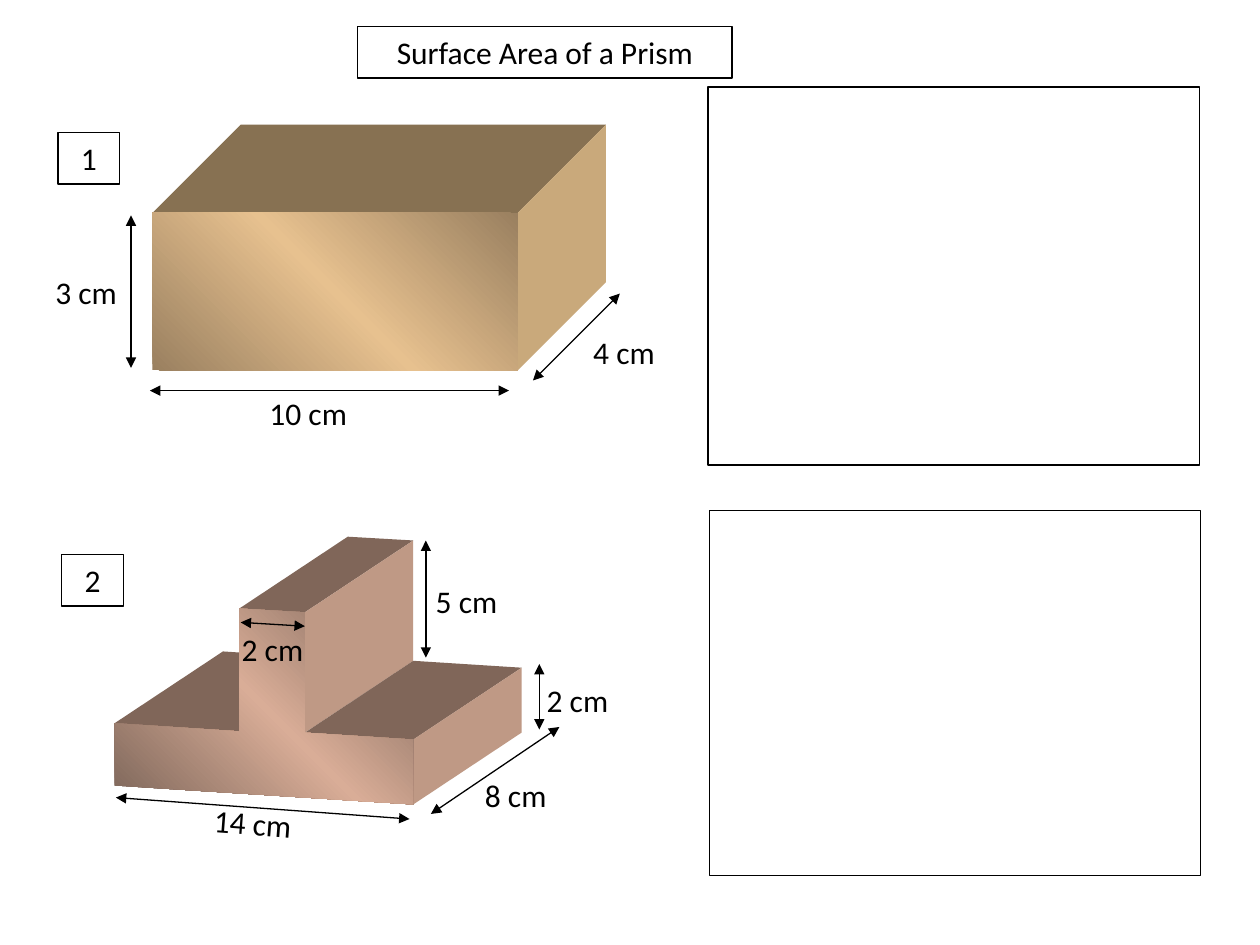
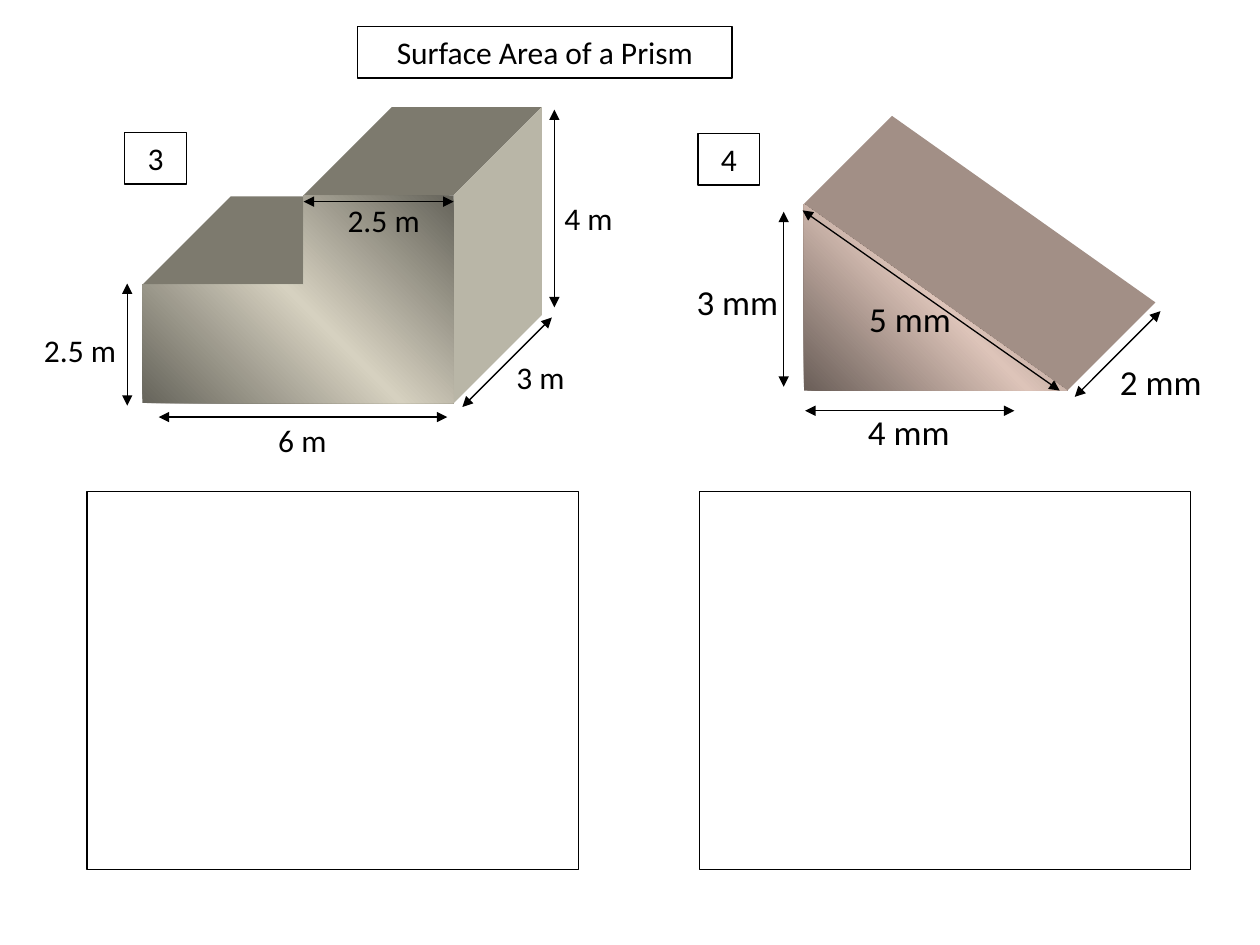
from lxml import etree
from pptx import Presentation
from pptx.dml.color import RGBColor
from pptx.enum.shapes import MSO_CONNECTOR, MSO_SHAPE
from pptx.enum.text import MSO_ANCHOR, PP_ALIGN
from pptx.oxml import parse_xml
from pptx.oxml.ns import nsdecls, qn
from pptx.util import Inches, Pt

WIDTH, HEIGHT = Inches(10), Inches(7.5)
COLS, ROWS = 100, 75
COL, ROW = WIDTH / COLS, HEIGHT / ROWS

COLORS = {
    "ink": "000000",
    "tan": {"top": "877152", "side": "C9A97B", "edge": "9A8060", "glow": "E7C18F"},
    "rose": {"top": "806659", "side": "BF9985", "edge": "7D665A", "glow": "D9AD97"},
    "grey": {"top": "7D7A6E", "side": "B9B6A7", "edge": "66645B", "glow": "D6D1C0"},
    "pink": {"top": "A28F86", "side": "A28F86", "edge": "6A5E58", "glow": "DDC4B9"},
}
FONT = {"name": "Calibri", "size": Pt(18)}
TITLE = "Surface Area of a Prism"
TITLE_BOX = (28.4, 2.1, 29.7, 4.1)
NUMBER_SIZE = (4.9, 4.1)

# Outlines run clockwise. Points, arrows and labels count from each prism's origin.
# A label is text, column, row, width and, if tilted, its rotation.
BOX_PRISM = {
    "origin": (12.1, 16.9), "color": "tan", "depth": (7, -7), "size": 18,
    "outline": [(0, 0), (29, 0), (29, 12.5), (0, 12.5)],
    "arrows": [(-0.2, 14.1, 28.3, 14.1), (30.2, 13.3, 37.1, 6.4),
               (-1.7, 0.2, -1.7, 12.3)],
    "labels": [("10 cm", 8.3, 13.9, 10.9), ("4 cm", 34, 9, 10.9),
               ("3 cm", -8.7, 4.3, 10.9)],
}
T_PRISM = {
    "origin": (9.1, 48.3), "color": "rose", "depth": (8.6, -5.7), "size": 18,
    "outline": [(0, 9.1), (9.9, 9.75), (9.9, 0), (15.1, 0.3), (15.1, 9.85),
                (23.7, 10.4), (23.7, 15.55), (0, 14.05)],
    "arrows": [(0.1, 15, 23.4, 16.7), (25.1, 16.3, 35.3, 9.4),
               (33.7, 4.4, 33.7, 9.6), (10, 1.1, 15.1, 1.4),
               (24.7, -5.4, 24.7, 3.9)],
    "labels": [("14 cm", 6.9, 15.2, 12.4, 4.4), ("8 cm", 28.4, 12.8, 8.1),
               ("2 cm", 33.3, 5.3, 8.1), ("5 cm", 24.5, -2.6, 8.1),
               ("2 cm", 9.1, 1.2, 7.6)],
}
STEP_PRISM = {
    "origin": (11.3, 15.5), "color": "grey", "depth": (7, -7), "size": 18,
    "outline": [(0, 7.1), (12.8, 7.1), (12.8, 0), (24.7, 0), (24.7, 16.5), (0, 16.5)],
    "arrows": [(1.3, 17.6, 24.2, 17.6), (32.7, -6.8, 32.7, 8.9),
               (25.4, 16.8, 32.5, 9.7), (-1.2, 7, -1.2, 16.7),
               (12.8, 0.5, 24.7, 0.5)],
    "labels": [("2.5 m", 15.3, 0, 9.9), ("6 m", 9.8, 17.4, 9.9),
               ("3 m", 28.7, 12.4, 9.9), ("4 m", 32.5, -0.2, 9.9),
               ("2.5 m", -8.8, 10.3, 9.9)],
}
WEDGE_PRISM = {
    "origin": (63.8, 16.2), "color": "pink", "depth": (7, -7), "size": 20,
    "outline": [(0, 0), (20.9, 14.8), (0, 14.8)],
    "arrows": [(0.1, 16.4, 16.7, 16.4), (21.5, 15.3, 28.3, 8.5),
               (-1.6, 0.6, -1.6, 14.5), (-0.1, 0.5, 20.3, 14.8)],
    "labels": [("3 mm", -9.5, 5.6, 13.8), ("4 mm", 4.1, 15.9, 13.8),
               ("2 mm", 24.1, 11.9, 9.2), ("5 mm", 4.2, 6.9, 13.8)],
}

# Each question: number, corner of the number box, prism, answer box.
SLIDES = [
    [("1", (4.6, 10.5), BOX_PRISM, (56.2, 6.9, 39, 30)),
     ("2", (4.9, 44), T_PRISM, (56.3, 40.5, 39, 29))],
    [("3", (9.9, 10.5), STEP_PRISM, (6.9, 39, 39, 30)),
     ("4", (55.4, 10.6), WEDGE_PRISM, (55.5, 39, 39, 30))],
]


def on_grid(*cells):
    """Turn alternating columns and rows into slide lengths."""
    return [round(c * (ROW if i % 2 else COL)) for i, c in enumerate(cells)]


def shift(point, by):
    return point[0] + by[0], point[1] + by[1]


def write(sp, text, **changes):
    tf = sp.text_frame
    p = tf.paragraphs[0]
    r = p.add_run()
    r.text = text
    for name, value in {**FONT, **changes}.items():
        setattr(r.font, name, value)
    r.font.color.rgb = RGBColor.from_string(COLORS["ink"])
    return tf, p


def set_line(line):
    line.color.rgb = RGBColor.from_string(COLORS["ink"])
    line.width = Pt(0.75)


def add_frame(slide, box, text=""):
    sp = slide.shapes.add_shape(MSO_SHAPE.RECTANGLE, *on_grid(*box))
    sp.shadow.inherit = False
    sp.fill.background()
    set_line(sp.line)
    if text:
        tf, p = write(sp, text)
        tf.vertical_anchor = MSO_ANCHOR.MIDDLE
        p.alignment = PP_ALIGN.CENTER


def add_label(slide, origin, size, text, col, row, width, rotation=0):
    box = (*shift(origin, (col, row)), width, 4 if size == 18 else 4.3)
    sp = slide.shapes.add_textbox(*on_grid(*box))
    sp.rotation = rotation
    tf, _ = write(sp, text, size=Pt(size))
    tf.word_wrap = True


def add_arrow(slide, origin, x1, y1, x2, y2):
    ends = on_grid(*shift((x1, y1), origin), *shift((x2, y2), origin))
    cn = slide.shapes.add_connector(MSO_CONNECTOR.STRAIGHT, *ends)
    set_line(cn.line)
    ln = cn.line._get_or_add_ln()
    for end in ("a:headEnd", "a:tailEnd"):
        etree.SubElement(ln, qn(end), type="triangle")
    etree.SubElement(cn._element.spPr, qn("a:effectLst"))


def add_face(slide, points, color=None):
    start, *rest = [on_grid(*pt) for pt in points]
    builder = slide.shapes.build_freeform(*start, scale=1.0)
    builder.add_line_segments(rest, close=True)
    sp = builder.convert_to_shape()
    sp.shadow.inherit = False
    sp.line.fill.background()
    if color:
        sp.fill.solid()
        sp.fill.fore_color.rgb = RGBColor.from_string(color)
    return sp


def add_front(slide, points, edge, glow):
    """Front face with a light band between two darker corners."""
    sp = add_face(slide, points)
    stops = "".join(
        f'<a:gs pos="{pos}"><a:srgbClr val="{color}"/></a:gs>'
        for pos, color in ((0, edge), (50000, glow), (100000, edge)))
    sp._element.spPr.find(qn("a:custGeom")).addnext(parse_xml(
        f'<a:gradFill {nsdecls("a")} rotWithShape="1"><a:gsLst>{stops}</a:gsLst>'
        '<a:lin ang="18900000" scaled="0"/></a:gradFill>'))


def add_prism(slide, prism):
    """Extrude the outline, drawing only faces turned towards its depth."""
    origin, depth = prism["origin"], prism["depth"]
    colors = COLORS[prism["color"]]
    front = [shift(pt, origin) for pt in prism["outline"]]
    for a, b in zip(front, front[1:] + front[:1]):
        dx, dy = b[0] - a[0], b[1] - a[1]
        if dy * depth[0] - dx * depth[1] > 0:
            shade = "side" if abs(dx) < 0.01 else "top"
            add_face(slide, [a, b, shift(b, depth), shift(a, depth)], colors[shade])
    add_front(slide, front, colors["edge"], colors["glow"])
    for arrow in prism["arrows"]:
        add_arrow(slide, origin, *arrow)
    for label in prism["labels"]:
        add_label(slide, origin, prism["size"], *label)


def add_question_slide(prs, questions):
    slide = prs.slides.add_slide(prs.slide_layouts[6])
    for number, corner, prism, answer_box in questions:
        add_prism(slide, prism)
        add_frame(slide, answer_box)
        add_frame(slide, (*corner, *NUMBER_SIZE), number)
    add_frame(slide, TITLE_BOX, TITLE)


def main():
    prs = Presentation()
    prs.slide_width, prs.slide_height = WIDTH, HEIGHT
    for questions in SLIDES:
        add_question_slide(prs, questions)
    prs.save("out.pptx")


if __name__ == "__main__":
    main()
